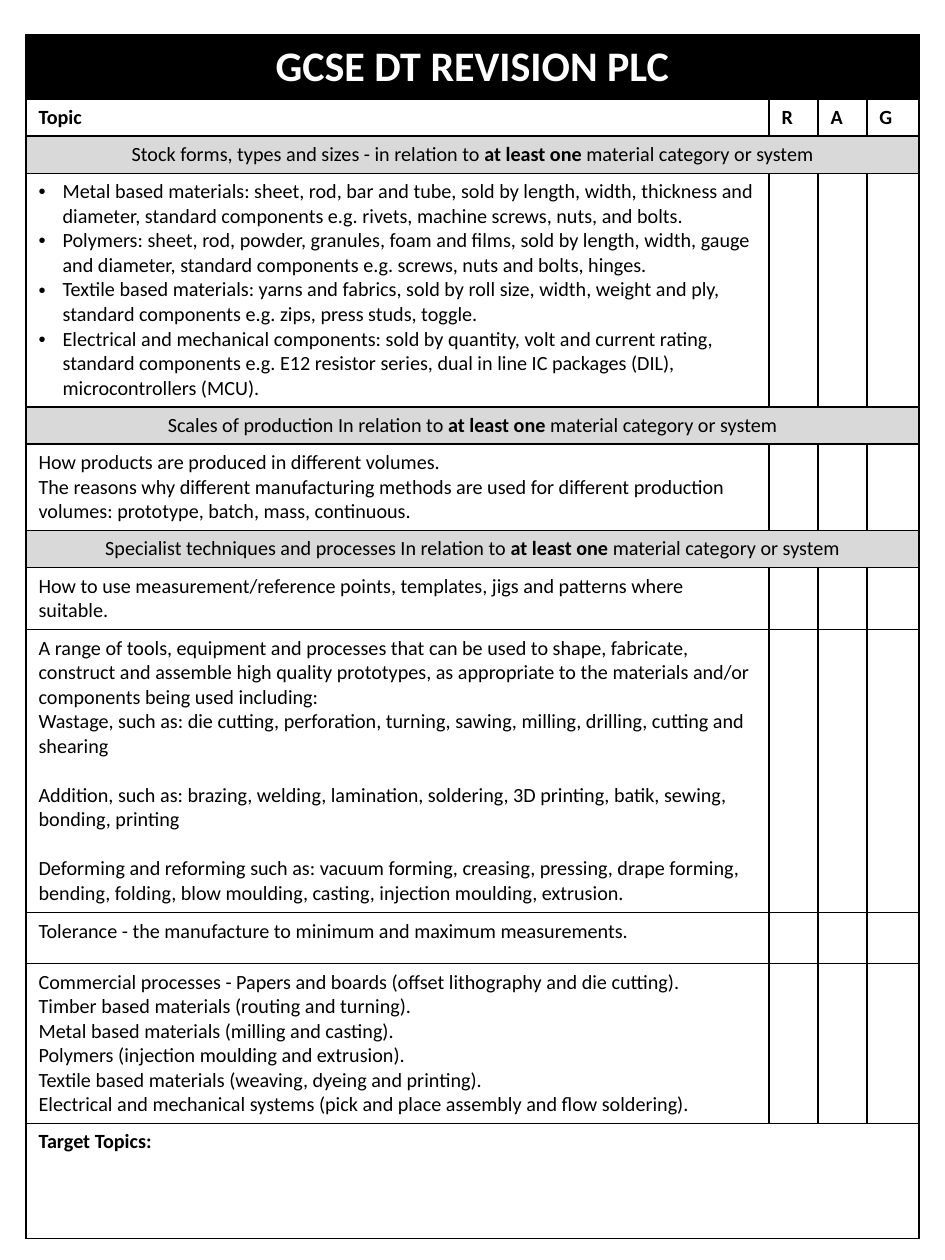
"""Build the one-page GCSE DT revision checklist."""
from lxml import etree
from pptx import Presentation
from pptx.dml.color import RGBColor
from pptx.enum.text import PP_ALIGN
from pptx.oxml.ns import qn
from pptx.util import Pt

PX = 914400 // 126
BLACK = RGBColor(0x00, 0x00, 0x00)
WHITE = RGBColor(0xFF, 0xFF, 0xFF)
GREY = RGBColor(0xD9, 0xD9, 0xD9)
CENTER, LEFT = PP_ALIGN.CENTER, PP_ALIGN.LEFT
FONT = "Calibri"
BODY = Pt(11.5)
INDENT = 24 * PX
EMPHASIS = "at least one "
SCOPE = " in relation to at least one material category or system"

COLUMN_WIDTHS = [743, 49, 49, 52]
ROWS = [
    ("title", 62, ["GCSE DT REVISION PLC"]),
    ("header", 37, ["Topic"]),
    ("section", 37, ["Stock forms, types and sizes -" + SCOPE]),
    ("bullets", 233, [
        "Metal based materials: sheet, rod, bar and tube, sold by length, width, thickness and diameter, "
        "standard components e.g. rivets, machine screws, nuts, and bolts.",
        "Polymers: sheet, rod, powder, granules, foam and films, sold by length, width, gauge and diameter, "
        "standard components e.g. screws, nuts and bolts, hinges.",
        "Textile based materials: yarns and fabrics, sold by roll size, width, weight and ply, "
        "standard components e.g. zips, press studs, toggle.",
        "Electrical and mechanical components: sold by quantity, volt and current rating, "
        "standard components e.g. E12 resistor series, dual in line IC packages (DIL), microcontrollers (MCU).",
    ]),
    ("section", 37, ["Scales of production" + SCOPE.replace("in", "In", 1)]),
    ("topic", 86, [
        "How products are produced in different volumes.",
        "The reasons why different manufacturing methods are used for different production volumes: "
        "prototype, batch, mass, continuous.",
    ]),
    ("section", 37, ["Specialist techniques and processes" + SCOPE.replace("in", "In", 1)]),
    ("topic", 62, ["How to use measurement/reference points, templates, jigs and patterns where suitable."]),
    ("topic", 283, [
        "A range of tools, equipment and processes that can be used to shape, fabricate, construct and assemble "
        "high quality prototypes, as appropriate to the materials and/or components being used including:",
        "Wastage, such as: die cutting, perforation, turning, sawing, milling, drilling, cutting and shearing",
        "Addition, such as: brazing, welding, lamination, soldering, 3D printing, batik, sewing, bonding, printing",
        "Deforming and reforming such as: vacuum forming, creasing, pressing, drape forming, bending, folding, "
        "blow moulding, casting, injection moulding, extrusion.",
    ]),
    ("topic", 51, ["Tolerance - the manufacture to minimum and maximum measurements."]),
    ("topic", 159, [
        "Commercial processes - Papers and boards (offset lithography and die cutting).",
        "Timber based materials (routing and turning).",
        "Metal based materials (milling and casting).",
        "Polymers (injection moulding and extrusion).",
        "Textile based materials (weaving, dyeing and printing).",
        "Electrical and mechanical systems (pick and place assembly and flow soldering).",
    ]),
    ("target", 115, ["Target Topics:"]),
]
FILLS = {"title": BLACK, "section": GREY}
MERGED = ("title", "section", "target")
BOLD = ("title", "header", "target")
SPACED_STARTS = ("Addition", "Deforming")


def add_borders(cell):
    properties = cell._tc.get_or_add_tcPr()
    for position, side in enumerate(("a:lnL", "a:lnR", "a:lnT", "a:lnB")):
        line = etree.Element(qn(side), w=str(Pt(1)))
        fill = etree.SubElement(line, qn("a:solidFill"))
        etree.SubElement(fill, qn("a:srgbClr"), val=str(BLACK))
        properties.insert(position, line)


def write_paragraph(para, text, kind):
    para.alignment = CENTER if kind in ("title", "section") else LEFT
    para.font.name = FONT
    para.font.size = Pt(24) if kind == "title" else BODY
    para.font.bold = kind in BOLD
    para.font.color.rgb = WHITE if kind == "title" else BLACK
    if text.startswith(SPACED_STARTS):
        para.space_before = Pt(14)
    before, emphasis, after = text.partition(EMPHASIS)
    for part in filter(None, (before, emphasis, after)):
        span = para.add_run()
        span.text = part
        if part == EMPHASIS:
            span.font.bold = True
    if kind == "bullets":
        properties = para._p.get_or_add_pPr()
        properties.set("marL", str(INDENT))
        properties.set("indent", str(-INDENT))
        defaults = properties.find(qn("a:defRPr"))
        defaults.addprevious(etree.Element(qn("a:buFont"), typeface="Arial"))
        defaults.addprevious(etree.Element(qn("a:buChar"), char="•"))


deck = Presentation()
deck.slide_width, deck.slide_height = 945 * PX, 1260 * PX
page = deck.slides.add_slide(deck.slide_layouts[6])

frame = page.shapes.add_table(
    len(ROWS), len(COLUMN_WIDTHS), 26 * PX, 35 * PX,
    sum(COLUMN_WIDTHS) * PX, sum(height for _, height, _ in ROWS) * PX)
table = frame.table
table.first_row = False
table.horz_banding = False
for column, width in zip(table.columns, COLUMN_WIDTHS):
    column.width = width * PX

for row_index, (kind, height, lines) in enumerate(ROWS):
    table.rows[row_index].height = height * PX
    cells = list(table.rows[row_index].cells)
    contents = [lines] + [[letter if kind == "header" else ""] for letter in "RAG"]
    for cell, texts in zip(cells, contents):
        cell.fill.solid()
        cell.fill.fore_color.rgb = FILLS.get(kind, WHITE)
        add_borders(cell)
        for line_index, text in enumerate(texts):
            box = cell.text_frame
            para = box.add_paragraph() if line_index else box.paragraphs[0]
            write_paragraph(para, text, kind)
    if kind in MERGED:
        cells[0].merge(cells[-1])

deck.save("out.pptx")
